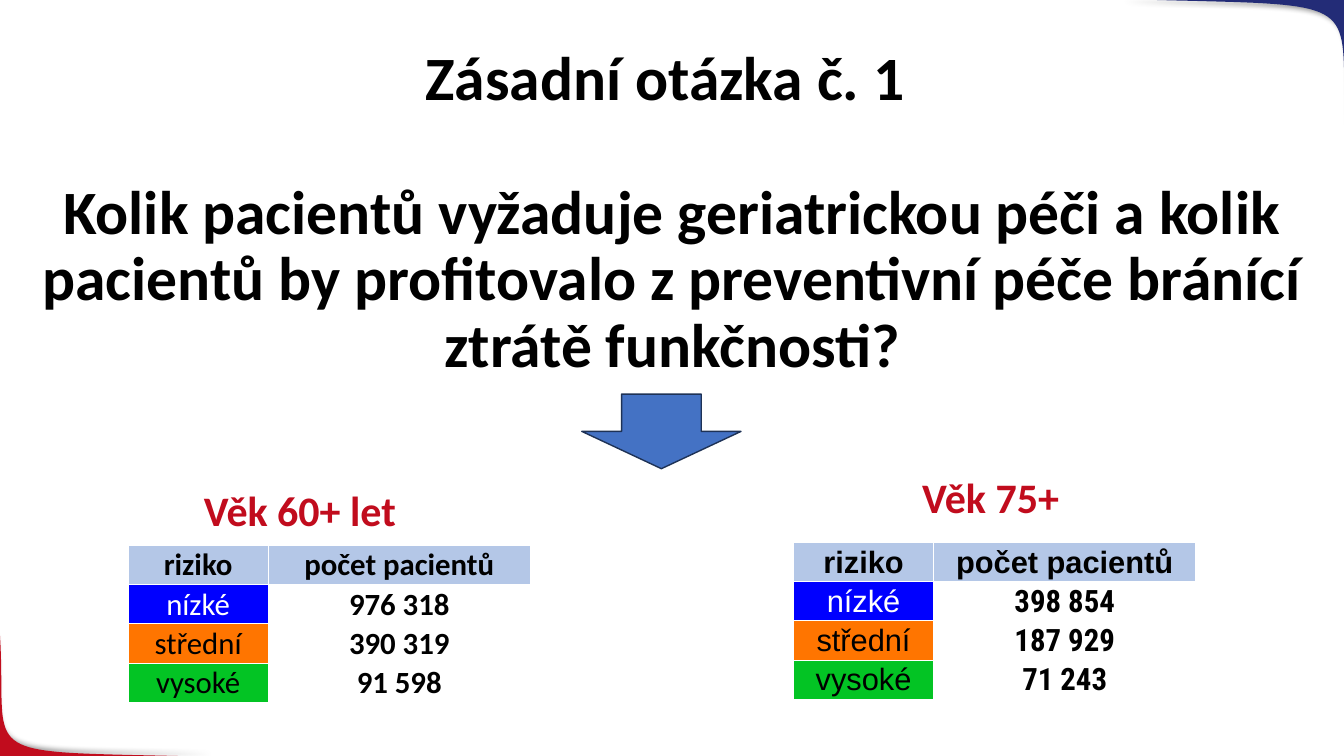
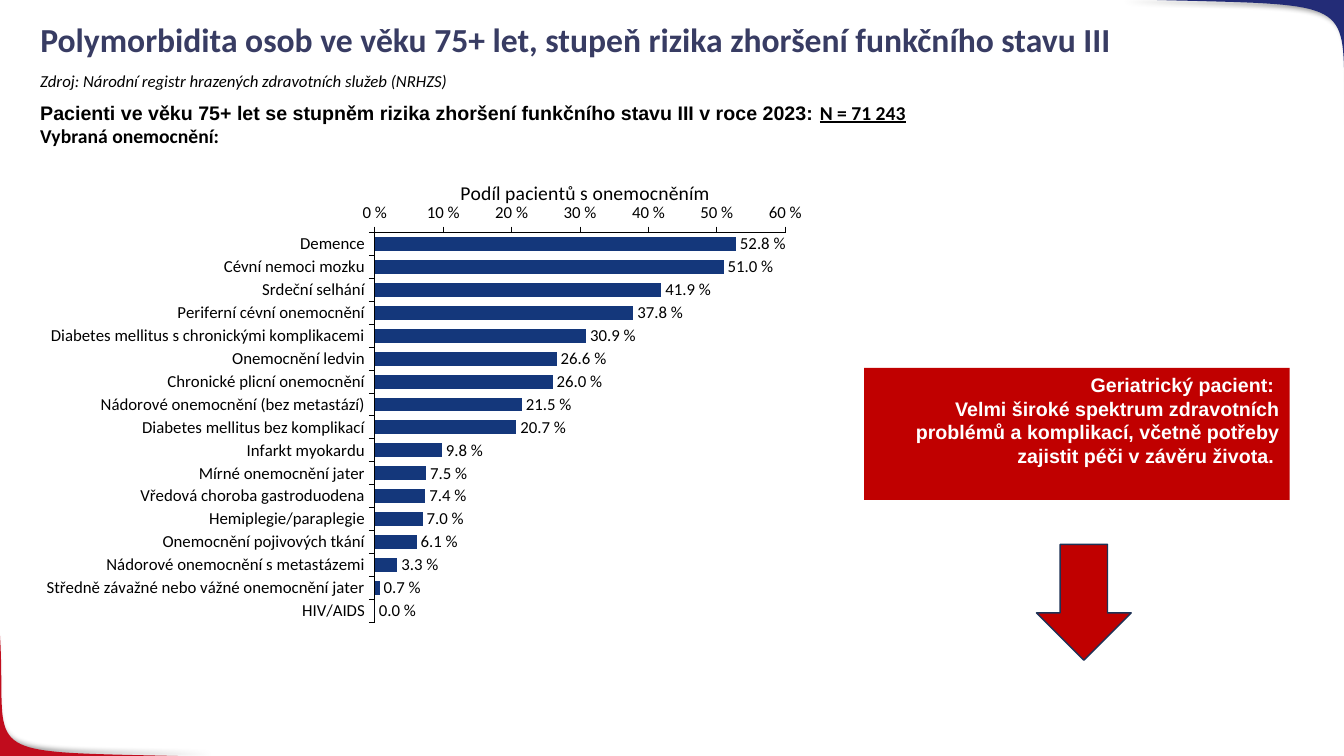
"""Builds two slides on the risk of functional decline in older patients."""
from lxml.etree import Element, SubElement
from pptx import Presentation
from pptx.chart.data import CategoryChartData
from pptx.dml.color import RGBColor
from pptx.enum.chart import XL_CHART_TYPE, XL_LABEL_POSITION, XL_TICK_MARK
from pptx.enum.shapes import MSO_SHAPE
from pptx.enum.text import MSO_ANCHOR, MSO_AUTO_SIZE, PP_ALIGN
from pptx.oxml.ns import qn
from pptx.util import Inches, Pt

BAR = XL_CHART_TYPE.BAR_CLUSTERED
LABEL_OUTSIDE = XL_LABEL_POSITION.OUTSIDE_END
TICK_OUTSIDE = XL_TICK_MARK.OUTSIDE
RECTANGLE, DOWN_ARROW = MSO_SHAPE.RECTANGLE, MSO_SHAPE.DOWN_ARROW
TOP, MIDDLE = MSO_ANCHOR.TOP, MSO_ANCHOR.MIDDLE
FIXED = MSO_AUTO_SIZE.NONE
LEFT, CENTER, RIGHT = PP_ALIGN.LEFT, PP_ALIGN.CENTER, PP_ALIGN.RIGHT

TITLE_ONLY = 5
BLACK, WHITE = "000000", "FFFFFF"
RED, NAVY, HEADING = "C10C1D", "232C77", "383C63"
ALERT, ARROW_BLUE, OUTLINE = "C00000", "4472C4", "1E3256"
BAR_BLUE, HEADER_BLUE = "14377B", "B4C7E7"
SANS, ARIAL, CONDENSED = "Calibri", "Arial", "Roboto Condensed"

RISKS = [("nízké", "0000FF", WHITE), ("střední", "FF7500", BLACK), ("vysoké", "03C424", BLACK)]
DISEASES = {
    "Demence": 0.528,
    "Cévní nemoci mozku": 0.51,
    "Srdeční selhání": 0.419,
    "Periferní cévní onemocnění": 0.378,
    "Diabetes mellitus s chronickými komplikacemi": 0.309,
    "Onemocnění ledvin": 0.266,
    "Chronické plicní onemocnění": 0.26,
    "Nádorové onemocnění (bez metastází)": 0.215,
    "Diabetes mellitus bez komplikací": 0.207,
    "Infarkt myokardu": 0.098,
    "Mírné onemocnění jater": 0.075,
    "Vředová choroba gastroduodena": 0.074,
    "Hemiplegie/paraplegie": 0.07,
    "Onemocnění pojivových tkání": 0.061,
    "Nádorové onemocnění s metastázemi": 0.033,
    "Středně závažné nebo vážné onemocnění jater": 0.007,
    "HIV/AIDS": 0,
}


def rgb(value):
    """Return the colour for a hex string."""
    return RGBColor.from_string(value)


def style_font(font, size, color=BLACK, name=SANS, bold=False, italic=False):
    """Apply size, colour, typeface and weight to a font."""
    font.size, font.name, font.bold, font.italic = Pt(size), name, bold, italic
    font.color.rgb = rgb(color)


def write(frame, lines, size, align=LEFT, spacing=1.0, gap=0, **style):
    """Fill a text frame with one paragraph per line."""
    frame.text = "\n".join(lines)
    for index, para in enumerate(frame.paragraphs):
        para.alignment, para.line_spacing = align, spacing
        para.space_before = Pt(gap if index else 0)
        for span in para.runs:
            style_font(span.font, size, **style)


def curve(points, steps=40):
    """Return points along a cubic curve given by four control points."""
    result = []
    for step in range(steps + 1):
        t = step / steps
        weights = ((1 - t) ** 3, 3 * t * (1 - t) ** 2, 3 * t * t * (1 - t), t ** 3)
        result.append(tuple(Inches(sum(w * p[axis] for w, p in zip(weights, points)))
                            for axis in (0, 1)))
    return result


def place(parent, x, y, width=None, height=None):
    """Set a manual layout on a chart title or plot area."""
    layout = parent.find(qn("c:layout"))
    if layout is None:
        layout = Element(qn("c:layout"))
        parent.insert(0, layout)
    manual = SubElement(layout, qn("c:manualLayout"))
    settings = [("xMode", "edge"), ("yMode", "edge"), ("x", x), ("y", y)]
    if width:
        settings = [("layoutTarget", "inner"), *settings, ("w", width), ("h", height)]
    for tag, value in settings:
        SubElement(manual, qn("c:" + tag)).set("val", str(value))


class SlideBuilder:
    """Holds the deck, its shared style and the current slide."""

    def __init__(self):
        """Start a widescreen deck."""
        self.deck = Presentation()
        self.deck.slide_width, self.deck.slide_height = Inches(13.33), Inches(7.5)
        self.layout = self.deck.slide_layouts[TITLE_ONLY]
        self.slide = None
        self.decorated = False

    def start(self, title, at, size, color, align):
        """Add a slide with its title."""
        self.slide = self.deck.slides.add_slide(self.layout)
        if not self.decorated:
            self.corner([(2.13, 7.51), (-0.34, 7.44), (0.08, 7.59), (0, 6.3)],
                        (-0.01, 7.51), RED, 225)
            self.corner([(11.11, -0.01), (13.7, 0.07), (13.26, -0.1), (13.35, 1.42)],
                        (13.35, -0.01), NAVY, 45)
            self.decorated = True
        box = self.slide.shapes.title
        box.left, box.top, box.width, box.height = map(Inches, at)
        frame = box.text_frame
        frame.auto_size, frame.vertical_anchor, frame.word_wrap = FIXED, TOP, True
        write(frame, [title], size, align, 0.9, color=color, bold=True)

    def corner(self, controls, tip, color, direction):
        """Draw a shadowed page corner and move it to the shared layout."""
        points = curve(controls)
        builder = self.slide.shapes.build_freeform(*points[0], scale=1.0)
        builder.add_line_segments([*points[1:], tuple(map(Inches, tip))], close=True)
        shape = builder.convert_to_shape()
        self.paint(shape, color)
        effects = shape.element.spPr.find(qn("a:effectLst"))
        shadow = SubElement(effects, qn("a:outerShdw"), blurRad=str(Pt(4)),
                            dist=str(Pt(3)), dir=str(direction * 60000))
        tint = SubElement(shadow, qn("a:srgbClr"), val=BLACK)
        SubElement(tint, qn("a:alpha"), val="40000")
        self.layout.shapes.element.append(shape.element)

    def paint(self, shape, fill, line=None):
        """Give a shape a plain fill and an optional outline."""
        shape.shadow.inherit = False
        shape.fill.solid()
        shape.fill.fore_color.rgb = rgb(fill)
        if line:
            shape.line.color.rgb, shape.line.width = rgb(line), Pt(1)
        else:
            shape.line.fill.background()

    def shape(self, kind, at, fill, line=None):
        """Add a preset shape."""
        shape = self.slide.shapes.add_shape(kind, *map(Inches, at))
        self.paint(shape, fill, line)
        return shape

    def text(self, lines, at, size, **style):
        """Add a wrapping text box."""
        box = self.slide.shapes.add_textbox(*map(Inches, at))
        box.text_frame.word_wrap = True
        write(box.text_frame, lines, size, **style)
        return box

    def cell(self, cell, text, fill, **style):
        """Fill one table cell and give it white borders."""
        properties = cell._tc.get_or_add_tcPr()
        for side in ("lnL", "lnR", "lnT", "lnB"):
            border = SubElement(properties, qn("a:" + side), w=str(Pt(1)))
            SubElement(SubElement(border, qn("a:solidFill")), qn("a:srgbClr"), val=WHITE)
        cell.fill.solid()
        cell.fill.fore_color.rgb = rgb(fill)
        cell.margin_left = cell.margin_right = cell.margin_top = Inches(0.01)
        cell.margin_bottom = 0
        cell.vertical_anchor = MIDDLE
        write(cell.text_frame, [text], 22, CENTER, **style)

    def risk_table(self, left, top, counts, label_font, count_font):
        """Add a table of patient counts by risk."""
        table = self.slide.shapes.add_table(
            len(counts) + 1, 2, *map(Inches, (left, top, 3.99, 1.56))).table
        table.first_row = table.horz_banding = False
        table.columns[0].width, table.columns[1].width = Inches(1.39), Inches(2.6)
        for column, text in enumerate(("riziko", "počet pacientů")):
            self.cell(table.cell(0, column), text, HEADER_BLUE, name=label_font, bold=True)
        for row, ((risk, fill, color), count) in enumerate(zip(RISKS, counts), 1):
            self.cell(table.cell(row, 0), risk, fill, color=color, name=label_font)
            self.cell(table.cell(row, 1), count, WHITE, name=count_font, bold=True)

    def bar_chart(self, title, values, at):
        """Add a horizontal bar chart of shares."""
        data = CategoryChartData()
        data.categories = list(values)
        data.add_series("Series 1", list(values.values()))
        chart = self.slide.shapes.add_chart(BAR, *map(Inches, at), data).chart
        style_font(chart.font, 10)
        chart.has_legend = False
        chart.has_title = True
        write(chart.chart_title.text_frame, [title], 14)
        place(chart.chart_title._element, 0.54, 0.02)
        place(chart.element.find(".//" + qn("c:plotArea")), 0.437, 0.142, 0.516, 0.833)
        for axis in (chart.category_axis, chart.value_axis):
            axis.has_major_gridlines = False
            axis.major_tick_mark = TICK_OUTSIDE
            axis.format.line.color.rgb, axis.format.line.width = rgb(BLACK), Pt(0.75)
            style_font(axis.tick_labels.font, 12, bold=axis is chart.category_axis)
        chart.category_axis.reverse_order = True
        scale = chart.value_axis
        scale.minimum_scale, scale.maximum_scale, scale.major_unit = 0, 0.6, 0.1
        scale.tick_labels.number_format = "0\\ %"
        scale.tick_labels.number_format_is_linked = False
        plot = chart.plots[0]
        plot.gap_width, plot.vary_by_categories = 65, False
        series = plot.series[0]
        series.format.fill.solid()
        series.format.fill.fore_color.rgb = rgb(BAR_BLUE)
        labels = series.data_labels
        labels.show_value, labels.position = True, LABEL_OUTSIDE
        labels.number_format, labels.number_format_is_linked = "0.0\\ %", False
        style_font(labels.font, 12)


def build_question(page):
    """Build the slide with the key question."""
    page.start("Věk 60+ let", (0.5, 4.81, 4.95, 0.57), 30, RED, CENTER)
    page.text(["Zásadní otázka č. 1 ",
               "Kolik pacientů vyžaduje geriatrickou péči a kolik pacientů by profitovalo "
               "z preventivní péče bránící ztrátě funkčnosti?"],
              (0.28, 0.42, 12.78, 5.15), 44, align=CENTER, spacing=0.9, gap=48, bold=True)
    page.shape(DOWN_ARROW, (5.77, 3.91, 1.58, 0.74), ARROW_BLUE, OUTLINE)
    page.risk_table(1.27, 5.41, ("976 318", "390 319", "91 598"), SANS, SANS)
    page.text(["Věk 75+"], (7.35, 4.69, 4.95, 0.57), 30, align=CENTER, spacing=0.9,
              color=RED, bold=True)
    page.risk_table(7.87, 5.38, ("398 854", "187 929", "71 243"), ARIAL, CONDENSED)


def build_diseases(page):
    """Build the slide with selected diseases."""
    page.start("Polymorbidita osob ve věku 75+ let, stupeň rizika zhoršení funkčního stavu III",
               (0.3, 0.18, 11.5, 0.59), 24, HEADING, LEFT)
    page.bar_chart("Podíl pacientů s onemocněním", DISEASES, (0.27, 1.65, 7.89, 4.64))
    box = page.text(["Pacienti ve věku 75+ let se stupněm rizika zhoršení funkčního stavu III "
                     "v roce 2023: ", "Vybraná onemocnění:"],
                    (0.3, 0.95, 12.62, 0.57), 14, name=ARIAL, bold=True)
    first, second = box.text_frame.paragraphs
    total = first.add_run()
    total.text = "N = 71 243"
    style_font(total.font, 14, bold=True)
    total.font.underline = True
    second.runs[0].font.name = SANS
    page.text(["Zdroj: Národní registr hrazených zdravotních služeb (NRHZS)"],
              (0.3, 0.65, 11.38, 0.3), 12, italic=True)
    panel = page.shape(RECTANGLE, (8.57, 3.65, 4.22, 1.31), ALERT)
    panel.text_frame.word_wrap, panel.text_frame.vertical_anchor = True, TOP
    write(panel.text_frame,
          ["Geriatrický pacient: ",
           "Velmi široké spektrum zdravotních problémů a komplikací, včetně potřeby "
           "zajistit péči v závěru života. "],
          14, RIGHT, color=WHITE, name=ARIAL, bold=True)
    page.shape(DOWN_ARROW, (10.28, 5.4, 0.94, 1.15), ALERT, OUTLINE)


def main():
    """Build and save the deck."""
    page = SlideBuilder()
    build_question(page)
    build_diseases(page)
    page.deck.save("out.pptx")


if __name__ == "__main__":
    main()
